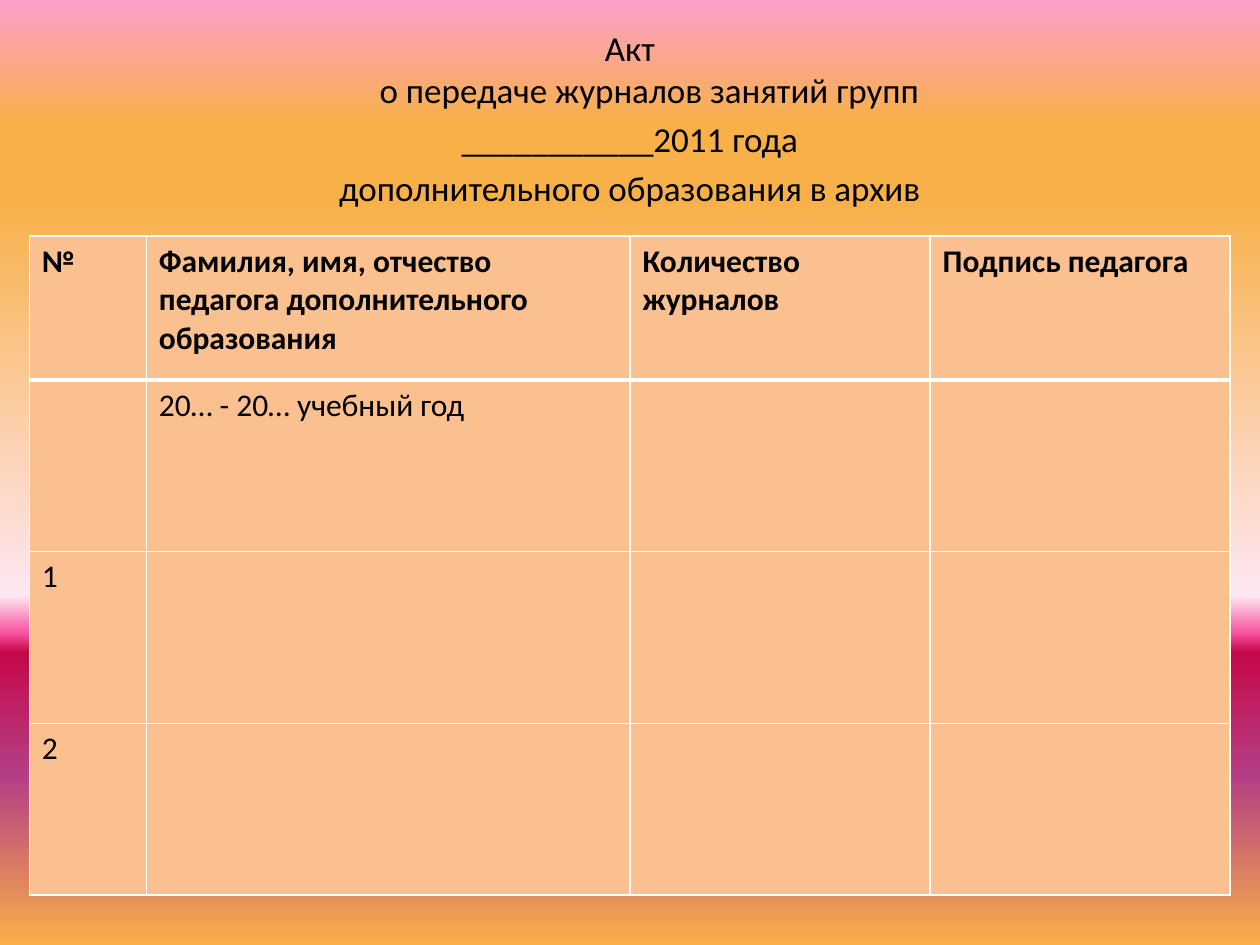
from dataclasses import dataclass

from lxml.etree import SubElement
from pptx import Presentation
from pptx.dml.color import RGBColor as RGB
from pptx.enum.text import PP_ALIGN as Align
from pptx.oxml.ns import qn
from pptx.util import Cm, Pt


@dataclass(frozen=True)
class Theme:
    font: str = "Calibri"
    text: str = "000000"
    cell: str = "FAC090"
    border: str = "FFFFFF"
    title_size: int = 20
    table_size: int = 18
    thin: int = 1
    thick: int = 3
    backdrop: tuple = (
        (0, "FC9FCB"), (13, "F8B049"), (21, "F8B049"), (63, "FEE7F2"),
        (67, "F952A0"), (69, "C50849"), (82, "B43E85"), (100, "F8B049"),
    )


def write(p, text, *, font, size, color, bold=False, align=Align.LEFT,
          before=0, hanging=0):
    p.alignment = align
    p.space_before = Pt(before)
    if hanging:
        pPr = p._p.get_or_add_pPr()
        pPr.set("marL", str(Cm(hanging)))
        pPr.set("indent", str(-Cm(hanging)))
    for i, line in enumerate(text.split("\n")):
        if i:
            p.add_line_break()
        r = p.add_run()
        r.text = line
        r.font.name = font
        r.font.size = Pt(size)
        r.font.bold = bold
        r.font.color.rgb = RGB.from_string(color)


class SlideBuilder:
    def __init__(self, slide, theme):
        self.s = slide
        self.theme = theme

    def background(self):
        fill = self.s.background.fill
        fill.gradient()
        fill.gradient_angle = 270
        stops = self.s.element.find(".//" + qn("a:gsLst"))
        for stop in list(stops):
            stops.remove(stop)
        for pos, color in self.theme.backdrop:
            stop = SubElement(stops, qn("a:gs"), pos=str(pos * 1000))
            SubElement(stop, qn("a:srgbClr"), val=color)

    def heading(self, paragraphs, left, top, width, height):
        t = self.theme
        tf = self.s.shapes.add_textbox(Cm(left), Cm(top), Cm(width), Cm(height)).text_frame
        tf.word_wrap = True
        for i, text in enumerate(paragraphs):
            p = tf.add_paragraph() if i else tf.paragraphs[0]
            write(p, text, font=t.font, size=t.title_size, color=t.text,
                  align=Align.CENTER, before=t.title_size * 0.2, hanging=0.95)

    def borders(self, cell, **widths):
        tcPr = cell._tc.get_or_add_tcPr()
        for i, side in enumerate("LRTB"):
            width = widths.get(side, self.theme.thin)
            ln = SubElement(tcPr, qn(f"a:ln{side}"), w=str(Pt(width)))
            fill = SubElement(ln, qn("a:solidFill"))
            SubElement(fill, qn("a:srgbClr"), val=self.theme.border)
            tcPr.insert(i, ln)

    def table(self, rows, left, top, widths, heights):
        t = self.theme
        table = self.s.shapes.add_table(
            len(rows), len(widths), Cm(left), Cm(top),
            Cm(sum(widths)), Cm(sum(heights))).table
        for column, width in zip(table.columns, widths):
            column.width = Cm(width)
        for y, (texts, height) in enumerate(zip(rows, heights)):
            table.rows[y].height = Cm(height)
            for x, text in enumerate(texts):
                cell = table.cell(y, x)
                cell.fill.solid()
                cell.fill.fore_color.rgb = RGB.from_string(t.cell)
                self.borders(cell, **{0: {"B": t.thick}, 1: {"T": t.thick}}.get(y, {}))
                if text:
                    write(cell.text_frame.paragraphs[0], text, font=t.font,
                          size=t.table_size, color=t.text, bold=y == 0)


def main():
    prs = Presentation()
    prs.slide_width, prs.slide_height = Cm(25.4), Cm(19.05)
    slide = SlideBuilder(prs.slides.add_slide(prs.slide_layouts[6]), Theme())
    slide.background()
    slide.heading(
        ["Акт\nо передаче журналов занятий групп ",
         "___________2011 года",
         "дополнительного образования в архив"],
        1.27, 0.4, 22.86, 16.6)
    slide.table(
        [["№", "Фамилия, имя, отчество педагога дополнительного образования",
          "Количество журналов", "Подпись педагога"],
         ["", "20… - 20… учебный год", "", ""],
         ["1", "", "", ""],
         ["2", "", "", ""]],
        0.59, 4.76, [2.36, 9.75, 6.05, 6.05], [2.9] + [3.46] * 3)
    prs.save("out.pptx")


if __name__ == "__main__":
    main()
